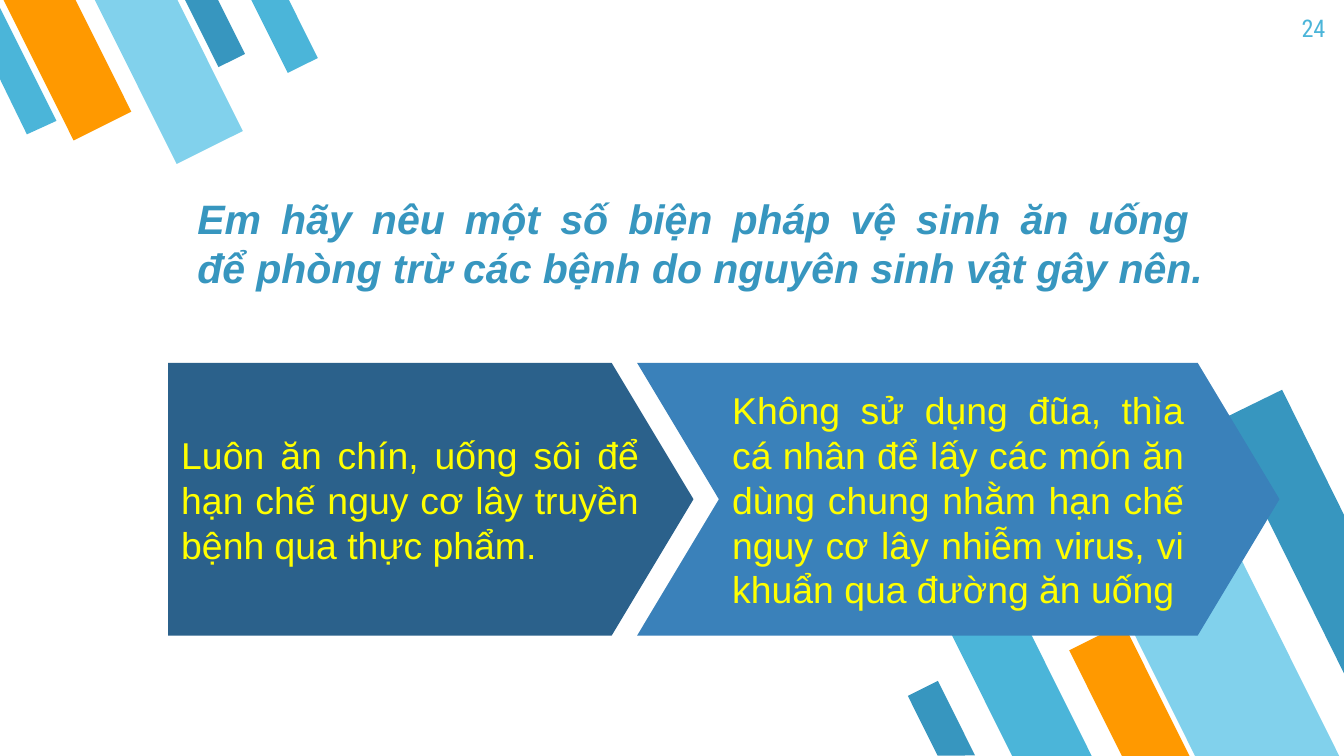
from pptx import Presentation
from pptx.dml.color import RGBColor
from pptx.enum.shapes import MSO_SHAPE as SHAPE
from pptx.enum.text import MSO_ANCHOR as ANCHOR, PP_ALIGN as ALIGN
from pptx.util import Inches, Pt

SKY = RGBColor(0x4B, 0xB5, 0xD9)
PALE = RGBColor(0x81, 0xD1, 0xEC)
ORANGE = RGBColor(0xFF, 0x99, 0x00)
BLUE = RGBColor(0x37, 0x96, 0xBF)
NAVY = RGBColor(0x2B, 0x61, 0x8B)
MID_BLUE = RGBColor(0x3A, 0x81, 0xBA)
YELLOW = RGBColor(0xFF, 0xFF, 0x00)


def paint(sp, color):
    """Flat fill with no outline and no shadow."""
    sp.shadow.inherit = False
    sp.fill.solid()
    sp.fill.fore_color.rgb = color
    sp.line.fill.background()


def write(sp, text, size, color, font="Arial", align=ALIGN.JUSTIFY,
          anchor=ANCHOR.MIDDLE, strong=False):
    """Fill a shape with one paragraph; strong means bold italic."""
    tf = sp.text_frame
    tf.word_wrap = True
    tf.vertical_anchor = anchor
    tf.margin_left = tf.margin_right = Inches(0.1)
    tf.margin_top = tf.margin_bottom = Inches(0.1)
    p = tf.paragraphs[0]
    p.text = text
    p.alignment = align
    for r in p.runs:
        r.font.name = font
        r.font.size = Pt(size)
        r.font.color.rgb = color
        r.font.bold = r.font.italic = strong


prs = Presentation()
prs.slide_width = Inches(10)
prs.slide_height = Inches(10 * 9 / 16)
s = prs.slides.add_slide(prs.slide_layouts[6])

# Slanted corner stripes: left, top, width, height, rotation, colour
stripes = [
    (7.33, 4.5, 0.53, 1.32, 153.5, SKY),
    (8.53, 3.59, 0.96, 2.39, 153.5, PALE),
    (8.18, 4.68, 0.45, 1.11, 153.5, ORANGE),
    (6.88, 5.09, 0.25, 0.62, 153.5, BLUE),
    (1.49, -0.08, 0.22, 0.56, 333.5, BLUE),
    (0.26, -0.18, 0.48, 1.18, 333.5, ORANGE),
    (0.98, -0.2, 0.55, 1.37, 333.5, PALE),
    (1.99, -0.1, 0.25, 0.62, 333.5, SKY),
]
for *box, rotation, color in stripes:
    sp = s.shapes.add_shape(SHAPE.FLOWCHART_MANUAL_INPUT, *map(Inches, box))
    sp.rotation = rotation
    sp.element.spPr.xfrm.set("flipH", "1")
    paint(sp, color)

# Stripes cut off by the slide edge
cut_stripes = [
    ([(9.54, 2.9), (9.07, 3.13), (10, 5.01), (10, 3.83)], BLUE),
    ([(0.2, 1), (0.42, 0.9), (0, 0.06), (0, 0.59)], SKY),
]
for corners, color in cut_stripes:
    points = [(Inches(x), Inches(y)) for x, y in corners]
    outline = s.shapes.build_freeform(*points[0])
    outline.add_line_segments(points[1:], close=True)
    paint(outline.convert_to_shape(), color)

title = s.shapes.add_textbox(Inches(1.37), Inches(1.43), Inches(7.73), Inches(0.84))
write(title, "Em hãy nêu một số biện pháp vệ sinh ăn uống \n"
      "để phòng trừ các bệnh do nguyên sinh vật gây nên.",
      22, BLUE, anchor=ANCHOR.BOTTOM, strong=True)

arrows = [
    (SHAPE.PENTAGON, 1.25, 3.91, NAVY,
     "Luôn ăn chín, uống sôi để hạn chế nguy cơ lây truyền bệnh qua thực phẩm."),
    (SHAPE.CHEVRON, 4.74, 4.78, MID_BLUE,
     "Không sử dụng đũa, thìa cá nhân để lấy các món ăn dùng chung nhằm hạn chế "
     "nguy cơ lây nhiễm virus, vi khuẩn qua đường ăn uống"),
]
for kind, left, width, color, text in arrows:
    sp = s.shapes.add_shape(kind, Inches(left), Inches(2.7), Inches(width), Inches(2.03))
    sp.adjustments[0] = 0.3
    paint(sp, color)
    write(sp, text, 20, YELLOW)

number = s.shapes.add_textbox(Inches(9.36), Inches(0), Inches(0.6), Inches(0.43))
write(number, "24", 13, SKY, font="Roboto Condensed", align=ALIGN.RIGHT, anchor=ANCHOR.TOP)

prs.save("out.pptx")
